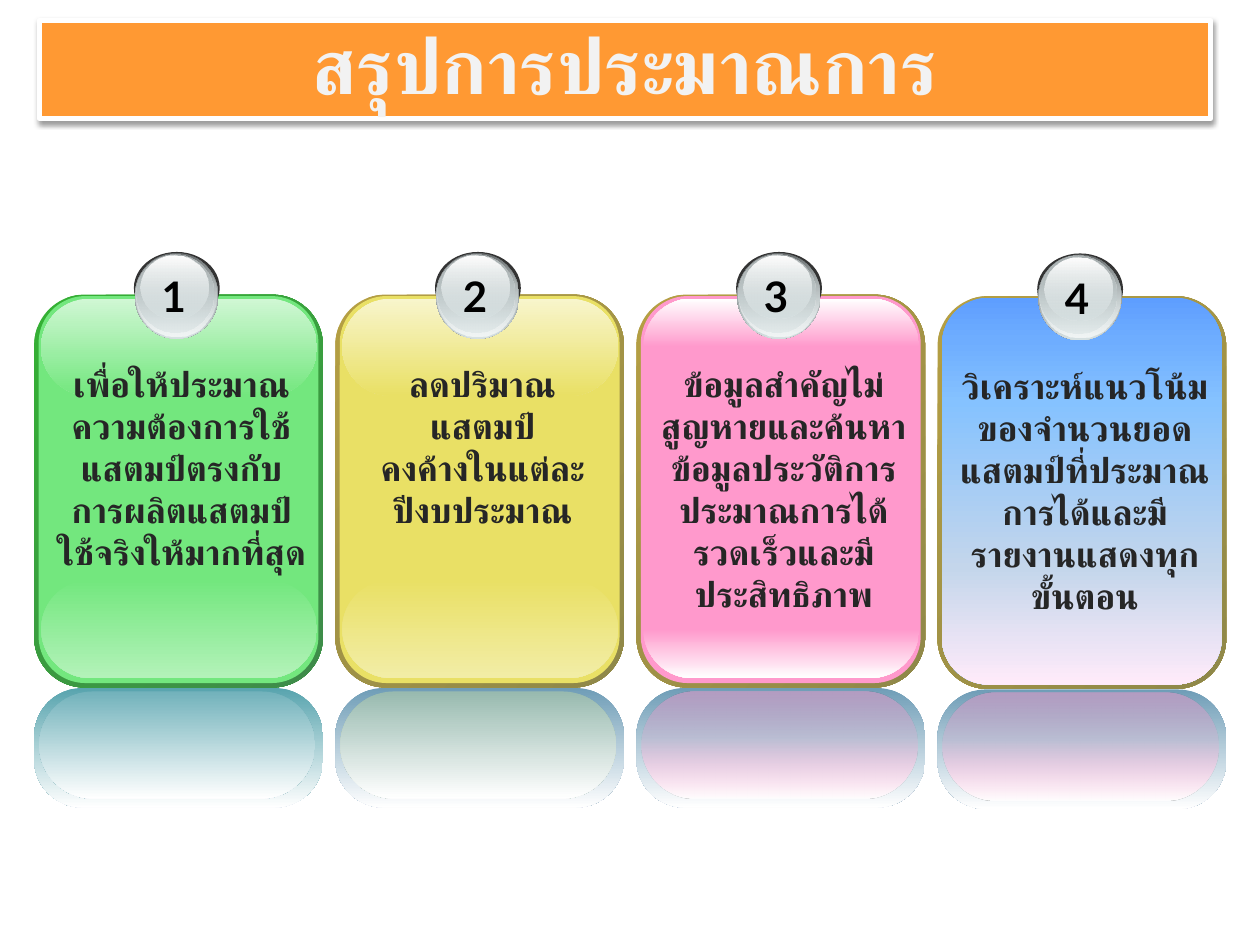
from typing import NamedTuple, Optional

from lxml.etree import SubElement
from pptx import Presentation
from pptx.dml.color import RGBColor
from pptx.enum.lang import MSO_LANGUAGE_ID
from pptx.enum.shapes import MSO_SHAPE
from pptx.enum.text import MSO_ANCHOR, MSO_AUTO_SIZE, PP_ALIGN
from pptx.oxml.ns import qn
from pptx.util import Cm, Pt

FONT = "Lato"
LEFT, TOP, STEP = 0.69, 5.94, 6.07


class Stop(NamedTuple):
    pos: int
    tone: str
    alpha: int = 100


class Paint(NamedTuple):
    stops: tuple[Stop, ...]
    turn: int = 90


class Box(NamedTuple):
    """Place in cm, measured from the corner of a card."""
    x: float
    y: float
    w: float
    h: float
    round: Optional[float] = None


class Card(NamedTuple):
    lines: tuple[str, ...]
    high: float
    rim: Paint
    face: Paint
    low: Optional[Paint]
    top: Optional[Paint]
    haze: Paint
    glow: Paint


def solid(tone: str) -> Paint:
    return Paint((Stop(0, tone),))


def fade(first: str, last: str, turn: int = 90, alpha: int = 100) -> Paint:
    return Paint((Stop(0, first), Stop(100, last, alpha)), turn)


def color(tone: str) -> RGBColor:
    return RGBColor.from_string(tone)


def fill(shape, paint: Paint) -> None:
    if len(paint.stops) == 1:
        shape.fill.solid()
        shape.fill.fore_color.rgb = color(paint.stops[0].tone)
        return
    shape.fill.gradient()
    shape.fill.gradient_angle = -paint.turn % 360
    ramp = shape._element.spPr.find(qn("a:gradFill")).find(qn("a:gsLst"))
    for old in list(ramp):
        ramp.remove(old)
    for stop in paint.stops:
        mark = SubElement(ramp, qn("a:gs"), pos=str(stop.pos * 1000))
        tint = SubElement(mark, qn("a:srgbClr"), val=stop.tone)
        if stop.alpha < 100:
            SubElement(tint, qn("a:alpha"), val=str(stop.alpha * 1000))


def place(box: Box, x: float, y: float) -> tuple:
    return Cm(x + box.x), Cm(y + box.y), Cm(box.w), Cm(box.h)


def layer(group, box: Box, paint: Paint, x: float, y: float) -> None:
    kind = MSO_SHAPE.OVAL if box.round is None else MSO_SHAPE.ROUNDED_RECTANGLE
    shape = group.shapes.add_shape(kind, *place(box, x, y))
    if box.round is not None:
        shape.adjustments[0] = box.round
    shape.shadow.inherit = False
    shape.line.fill.background()
    fill(shape, paint)


def write(para, text: str, size: int, tone: str) -> None:
    para.alignment = PP_ALIGN.CENTER
    run = para.add_run()
    run.text = text
    font = run.font
    font.name, font.size, font.bold = FONT, Pt(size), True
    font.color.rgb = color(tone)
    font.language_id = MSO_LANGUAGE_ID.THAI


def label(group, box: Box, lines: tuple[str, ...], size: int, tone: str,
          wrap: bool, x: float, y: float) -> None:
    frame = group.shapes.add_textbox(*place(box, x, y)).text_frame
    frame.word_wrap = wrap
    frame.auto_size = MSO_AUTO_SIZE.SHAPE_TO_FIT_TEXT
    for i, line in enumerate(lines):
        para = frame.add_paragraph() if i else frame.paragraphs[0]
        write(para, line, size, tone)


RIM = Box(0, 0, 5.82, 7.92, 0.175)
FACE = Box(0.09, 0.03, 5.64, 7.8, 0.167)
LOW = Box(0.14, 5.75, 5.56, 1.98, 0.5)
HIGH = Box(0.14, 0.08, 5.56, 1.96, 0.5)
HAZE = Box(0, 7.93, 5.82, 2.41, 0.404)
GLOW = Box(0.1, 8, 5.56, 2.16, 0.5)
NUMBER = Box(2.32, -0.61, 0.99, 1.3)
BALL = (
    (Box(2.01, -0.86, 1.73, 1.45), solid("333333")),
    (Box(2.03, -0.84, 1.68, 1.73), fade("636869", "D6E1E2")),
    (Box(2.05, -0.84, 1.63, 1.68),
     Paint((Stop(0, "D6E1E2", 0), Stop(100, "F1F5F5")))),
    (Box(2.06, -0.81, 1.55, 1.57), fade("AAB2B3", "D6E1E2", alpha=48)),
    (Box(2.15, -0.78, 1.37, 1.27), fade("FFFFFF", "D6E1E2", alpha=38)),
)

GOLD = fade("B59F43", "8F8849", 45)
BLUE = fade("6F9DB7", "FFFFFF")
PINK = (Stop(0, "FF99CC"), Stop(50, "FF99CC"), Stop(100, "FFFFFF"))
ROSE = Paint((Stop(0, "FF99CC", 46), Stop(44, "FF99CC", 17),
              Stop(100, "FFFFFF")))
SKY = Paint((Stop(0, "5E9EFF"), Stop(11, "6EADFF"), Stop(27, "85C2FF"),
             Stop(70, "C4D6EB"), Stop(100, "FFEBFA")))

CARDS = (
    Card(("เพื่อให้ประมาณความต้องการใช้แสตมป์ตรงกับการผลิตแสตมป์ใช้จริงให้มากที่สุด",),
         3.68, fade("34B034", "3F8B4A", 45), solid("73E77E"),
         fade("73E77E", "B3F2B9"), fade("D0F7D4", "73E77E"),
         fade("58A4AE", "FFFFFF"), fade("72B2BB", "FFFFFF")),
    Card(("ลดปริมาณแสตมป์", "คงค้างในแต่ละปีงบประมาณ"),
         2.82, GOLD, solid("E9E065"),
         fade("E9E065", "F2EDA6"), fade("F8F5CC", "E9E065"),
         BLUE, fade("98BAAF", "FFFFFF")),
    Card(("ข้อมูลสำคัญไม่สูญหายและค้นหาข้อมูลประวัติการประมาณการได้รวดเร็วและมีประสิทธิภาพ",),
         4.52, GOLD, solid("FF99CC"), Paint(PINK), Paint(PINK, 270),
         BLUE, ROSE),
    Card(("วิเคราะห์แนวโน้มของจำนวนยอดแสตมป์ที่ประมาณการได้และมีรายงานแสดงทุกขั้นตอน",),
         3.68, GOLD, SKY, None, None, BLUE, ROSE),
)


def draw(slide, card: Card, index: int) -> None:
    group = slide.shapes.add_group_shape()
    x = LEFT + STEP * index
    y = TOP + (0.03 if index == 3 else 0)
    parts = ((RIM, card.rim), (FACE, card.face), (LOW, card.low),
             (HIGH, card.top), *BALL, (HAZE, card.haze), (GLOW, card.glow))
    for box, paint in parts:
        if paint:
            layer(group, box, paint, x, y)
    label(group, NUMBER, (str(index + 1),), 24, "000000", False, x, y)
    body = Box(0.2, 1.25, 5.54, card.high)
    label(group, body, card.lines, 20, "262626", True, x, y)


def head(slide, text: str) -> None:
    title = slide.shapes.title
    title.left, title.top, title.width, title.height = (
        Cm(0.79), Cm(0.41), Cm(23.62), Cm(1.98))
    props = title._element.spPr
    shape = SubElement(props, qn("a:prstGeom"), prst="roundRect")
    SubElement(shape, qn("a:avLst"))
    fill(title, solid("FF9933"))
    title.line.color.rgb = color("FFFFFF")
    title.line.width = Pt(3)
    title.shadow.inherit = False
    shade = SubElement(props.find(qn("a:effectLst")), qn("a:outerShdw"),
                       blurRad="40000", dist="20000", dir="5400000",
                       rotWithShape="0")
    tint = SubElement(shade, qn("a:srgbClr"), val="000000")
    SubElement(tint, qn("a:alpha"), val="38000")
    frame = title.text_frame
    frame.vertical_anchor = MSO_ANCHOR.MIDDLE
    frame.auto_size = MSO_AUTO_SIZE.NONE
    frame.paragraphs[0].line_spacing = 0.9
    write(frame.paragraphs[0], text, 44, "F2F2F2")


def main() -> None:
    deck = Presentation()
    deck.slide_width, deck.slide_height = Cm(25.4), Cm(19.05)
    slide = deck.slides.add_slide(deck.slide_layouts[5])
    head(slide, "สรุปการประมาณการ")
    for index, card in enumerate(CARDS):
        draw(slide, card, index)
    deck.save("out.pptx")


if __name__ == "__main__":
    main()
